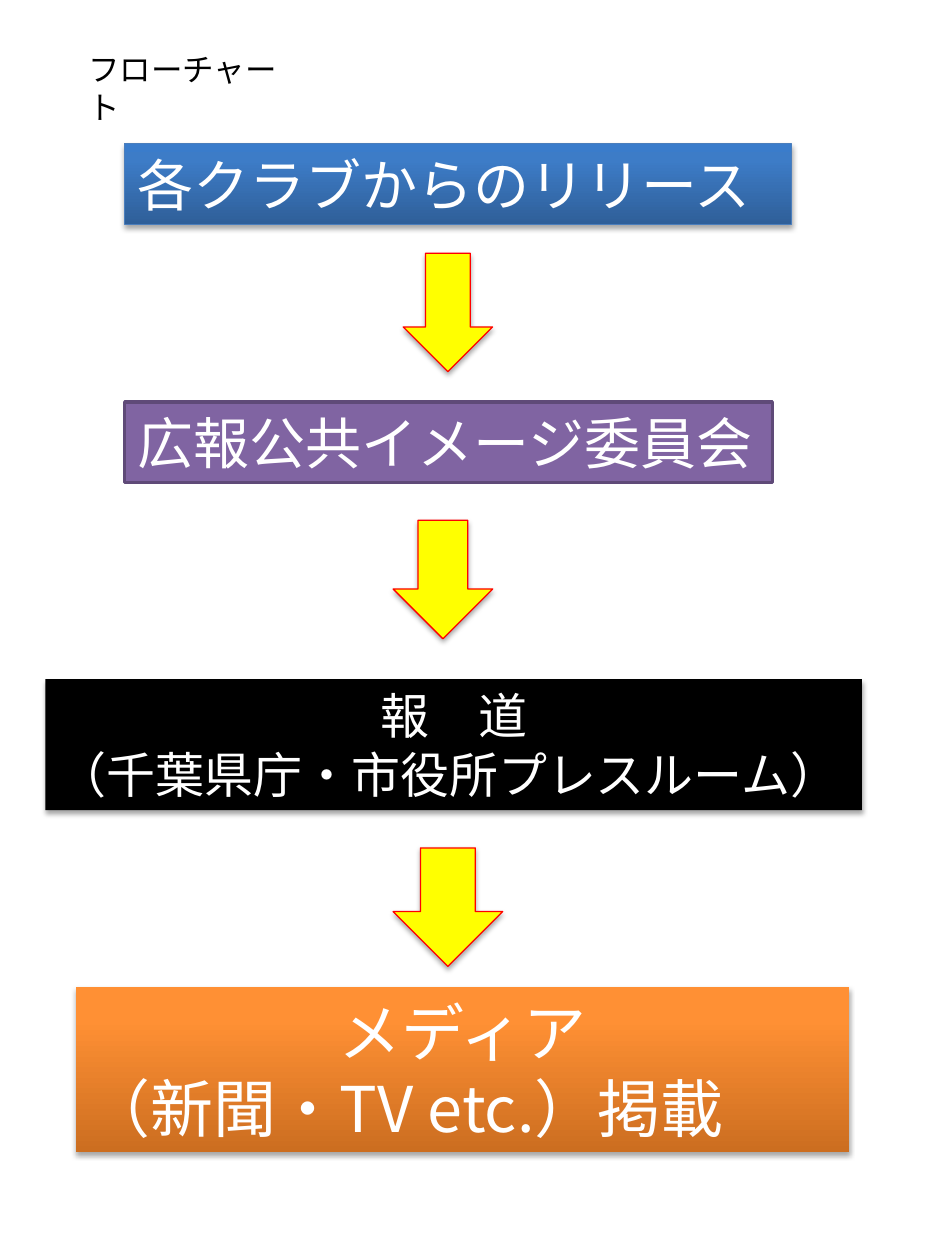
from lxml import etree
from pptx import Presentation
from pptx.dml.color import RGBColor
from pptx.enum import shapes, text
from pptx.oxml import ns
from pptx.util import Inches, Pt

COLORS = {
    "white": "FFFFFF", "black": "000000", "yellow": "FFFF00", "red": "FF0000",
    "purple": "8064A2", "plum": "5F4A78", "blue_edge": "4B7EBC",
}
BLUES = [(0, "2F5F99"), (80, "3D7CC7"), (100, "3A7CCB")]
ORANGES = [(0, "CC6E20"), (80, "FF9034"), (100, "FF9136")]
FONT = "Noto Sans CJK JP"
TITLE = "フローチャート"

STEPS = [
    dict(lines=["各クラブからのリリース"], at=(0.99, 1.14, 5.29, 0.64), size=32,
         fill=BLUES, line="blue_edge", weight=0.75),
    dict(lines=["広報公共イメージ委員会"], at=(0.99, 3.19, 5.14, 0.64), size=32,
         fill="purple", line="plum", weight=2, shadow=False),
    dict(lines=["報　道", "（千葉県庁・市役所プレスルーム）"],
         at=(0.36, 5.39, 6.48, 1.04), size=28, fill="black"),
    dict(lines=["メディア", "（新聞・TV etc.）掲載"],
         at=(0.6, 7.83, 6.14, 1.31), size=36, fill=ORANGES),
]
ARROWS = [(3.2, 2.01, 0.71), (3.12, 4.13, 0.79), (3.12, 6.73, 0.87)]
ARROW_HEIGHT = 0.94


def rgb(name):
    """Return the named colour."""
    return RGBColor.from_string(COLORS[name])


def add_node(parent, tag, **attrs):
    """Append a DrawingML element with the given attributes."""
    return etree.SubElement(parent, ns.qn(tag), {k: str(v) for k, v in attrs.items()})


def set_gradient(sp, stops):
    """Fill a shape with a vertical gradient."""
    sp.fill.gradient()
    sp.fill.gradient_angle = 90
    grad = sp.element.spPr.find(ns.qn("a:gradFill"))
    grad.find(ns.qn("a:lin")).set("ang", "16200000")
    gs_list = grad.find(ns.qn("a:gsLst"))
    for gs in list(gs_list):
        gs_list.remove(gs)
    for pos, color in stops:
        add_node(add_node(gs_list, "a:gs", pos=pos * 1000), "a:srgbClr", val=color)


def add_block(slide, kind, at, fill, line=None, weight=0.75, shadow=True):
    """Add a filled, outlined shape with an optional soft shadow."""
    sp = slide.shapes.add_shape(kind, *map(Inches, at))
    if isinstance(fill, list):
        set_gradient(sp, fill)
    else:
        sp.fill.solid()
        sp.fill.fore_color.rgb = rgb(fill)
    if line:
        sp.line.color.rgb = rgb(line)
        sp.line.width = Pt(weight)
    else:
        sp.line.fill.background()
    sp.shadow.inherit = False
    if shadow:
        effects = sp.element.spPr.find(ns.qn("a:effectLst"))
        outer = add_node(effects, "a:outerShdw", blurRad=Pt(3.1), dist=Pt(1.8),
                         dir=5400000, rotWithShape=0)
        add_node(add_node(outer, "a:srgbClr", val=COLORS["black"]), "a:alpha", val=35000)
    return sp


def write(sp, lines, size, color="white", font=FONT, anchor=text.MSO_ANCHOR.MIDDLE):
    """Write lines, centring the heading when a detail line follows it."""
    tf = sp.text_frame
    tf.word_wrap = True
    tf.auto_size = text.MSO_AUTO_SIZE.NONE
    tf.vertical_anchor = anchor
    for i, line in enumerate(lines):
        p = tf.add_paragraph() if i else tf.paragraphs[0]
        heading = i == 0 and len(lines) > 1
        p.alignment = text.PP_ALIGN.CENTER if heading else text.PP_ALIGN.LEFT
        r = p.add_run()
        r.text = line
        r.font.size = Pt(size)
        r.font.name = font
        r.font.color.rgb = rgb(color)
        if font == FONT:
            add_node(r.font._element, "a:ea", typeface=font)


def main():
    """Build the press release flowchart."""
    prs = Presentation()
    prs.slide_width, prs.slide_height = Inches(7.5), Inches(10)
    slide = prs.slides.add_slide(prs.slide_layouts[5])
    title = slide.shapes.title
    title.left, title.top, title.width, title.height = map(Inches, (0.6, 0.35, 1.7, 0.4))
    write(title, [TITLE], 18, color="black", font="Calibri", anchor=text.MSO_ANCHOR.TOP)
    for step in STEPS:
        style = {k: v for k, v in step.items() if k not in ("lines", "size")}
        sp = add_block(slide, shapes.MSO_SHAPE.RECTANGLE, **style)
        write(sp, step["lines"], step["size"])
    for left, top, width in ARROWS:
        add_block(slide, shapes.MSO_SHAPE.DOWN_ARROW, (left, top, width, ARROW_HEIGHT),
                  "yellow", line="red")
    prs.save("out.pptx")


if __name__ == "__main__":
    main()
